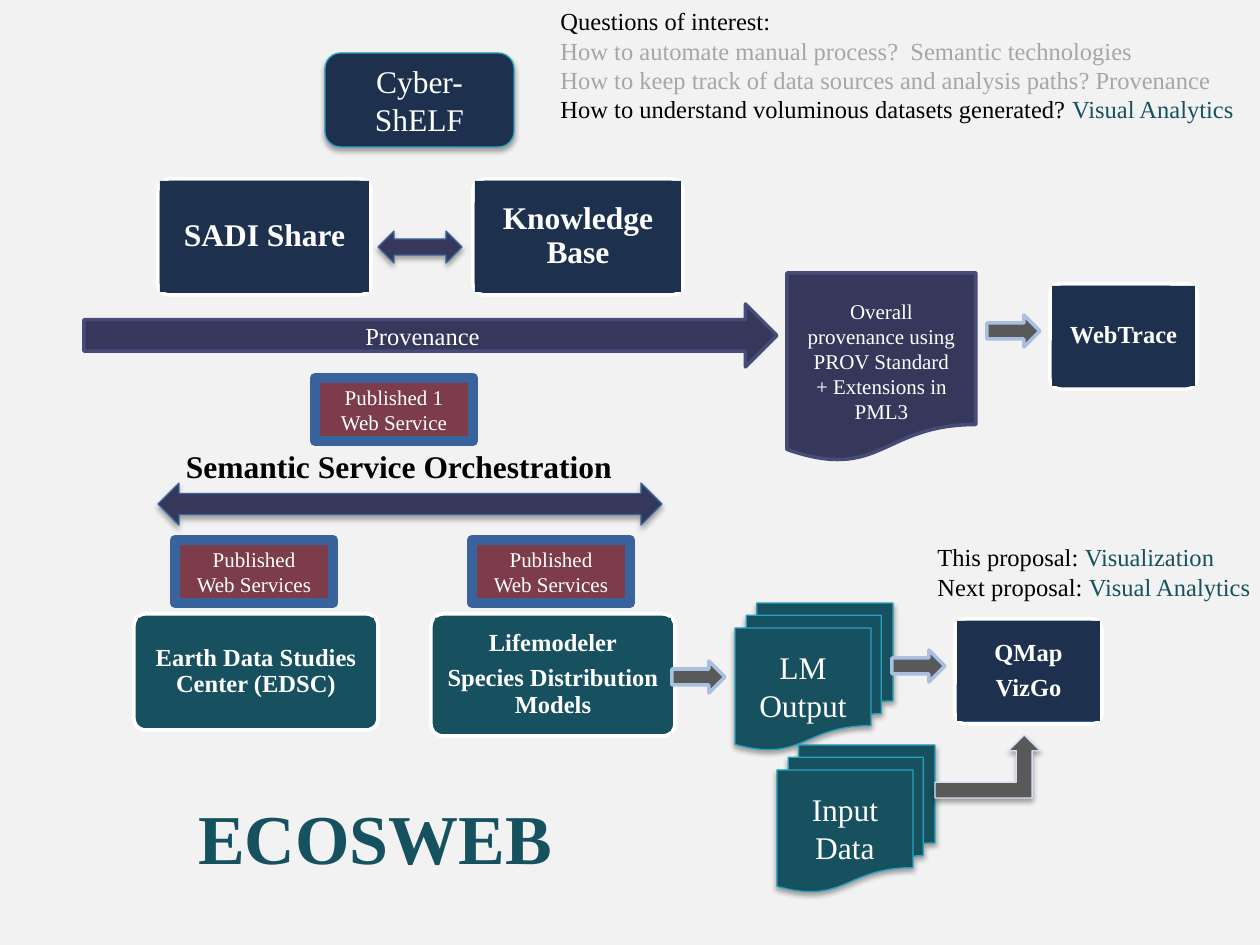
from lxml.etree import SubElement
from pptx import Presentation
from pptx.dml.color import RGBColor
from pptx.enum.shapes import MSO_SHAPE
from pptx.enum.text import MSO_ANCHOR, MSO_AUTO_SIZE, PP_ALIGN
from pptx.oxml.ns import qn
from pptx.util import Pt

PX = 914400 / 126
FONT = "Times New Roman"

PAPER = RGBColor(0xF2, 0xF2, 0xF2)
WHITE = RGBColor(0xFF, 0xFF, 0xFF)
BLACK = RGBColor(0x00, 0x00, 0x00)
FADED = RGBColor(0xA6, 0xA6, 0xA6)
GRAY = RGBColor(0x59, 0x59, 0x59)
MAROON = RGBColor(0x7D, 0x3C, 0x4A)
BLUE = RGBColor(0x39, 0x63, 0x9D)
PALE_BLUE = RGBColor(0xA8, 0xBF, 0xDF)
PALEST_BLUE = RGBColor(0xD4, 0xDF, 0xEF)
NAVY = RGBColor(0x1D, 0x31, 0x4E)
INDIGO = RGBColor(0x35, 0x38, 0x5A)
VIOLET = RGBColor(0x47, 0x4B, 0x78)
TEAL = RGBColor(0x17, 0x51, 0x60)
TEAL_TEXT = RGBColor(0x16, 0x51, 0x60)
CYAN = RGBColor(0x28, 0xA1, 0xBE)


def px(*lengths):
    return [round(length * PX) for length in lengths]


def apply(target, values):
    for name, value in values.items():
        setattr(target, name, value)


def write(frame, paragraphs, size, bold=False, color=WHITE,
          align=PP_ALIGN.CENTER, spacing=None):
    """Each paragraph is a string or a list of (text, color) pairs."""
    for index, content in enumerate(paragraphs):
        paragraph = frame.paragraphs[0] if index == 0 else frame.add_paragraph()
        apply(paragraph, {"alignment": align, **(spacing or {})})
        pieces = [(content, color)] if isinstance(content, str) else content
        for text, piece_color in pieces:
            run = paragraph.add_run()
            run.text = text
            apply(run.font, {"name": FONT, "size": Pt(size), "bold": bold})
            run.font.color.rgb = piece_color


def add_shadow(shape):
    effects = shape._element.spPr.find(qn("a:effectLst"))
    shadow = SubElement(effects, qn("a:outerShdw"), blurRad=str(Pt(3.1)),
                        dist=str(Pt(1.8)), dir="5400000", rotWithShape="0")
    color = SubElement(shadow, qn("a:srgbClr"), val="000000")
    SubElement(color, qn("a:alpha"), val="35000")


def add_block(slide, kind, box, fill, line=None, width=0.75, shadow=False):
    block = slide.shapes.add_shape(kind, *px(*box))
    block.shadow.inherit = False
    block.fill.solid()
    block.fill.fore_color.rgb = fill
    if line is None:
        block.line.fill.background()
    else:
        block.line.color.rgb = line
        block.line.width = Pt(width)
    if shadow:
        add_shadow(block)
    apply(block.text_frame, {"word_wrap": True, "vertical_anchor": MSO_ANCHOR.MIDDLE})
    return block


def add_card(slide, box, paragraphs, size, fill=NAVY, edge_fill=None, inset=2):
    """White-edged rounded card with a plain text panel on top."""
    left, top, width, height = box
    edge = add_block(slide, MSO_SHAPE.ROUNDED_RECTANGLE, box, edge_fill or fill, WHITE, 2)
    edge.adjustments[0] = 0.1
    panel_box = (left + inset, top + inset, width - 2 * inset, height - 2 * inset - 1)
    panel = add_block(slide, MSO_SHAPE.RECTANGLE, panel_box, fill)
    margin = px(8)[0]
    sides = ("left", "top", "right", "bottom")
    apply(panel.text_frame, {f"margin_{side}": margin for side in sides})
    write(panel.text_frame, paragraphs, size, bold=True,
          spacing={"line_spacing": 0.9, "space_after": Pt(round(size * 0.35))})


def add_service(slide, left, top, paragraphs):
    service = add_block(slide, MSO_SHAPE.RECTANGLE, (left, top, 158, 63), MAROON, BLUE, 6)
    write(service.text_frame, paragraphs, 12)


def add_data_stack(slide, left, top, paragraphs):
    stack = add_block(slide, MSO_SHAPE.FLOWCHART_MULTIDOCUMENT,
                      (left, top, 158, 147), TEAL, CYAN, shadow=True)
    write(stack.text_frame, paragraphs, 18)


def add_label(slide, box, paragraphs, size, wrap=False, **style):
    label = slide.shapes.add_textbox(*px(*box))
    apply(label.text_frame, {"word_wrap": wrap,
                             "auto_size": MSO_AUTO_SIZE.SHAPE_TO_FIT_TEXT})
    write(label.text_frame, paragraphs, size, **style)
    return label


def outline_text(label, color, width):
    properties = label.text_frame.paragraphs[0].runs[0].font._element
    line = SubElement(properties, qn("a:ln"), w=str(Pt(width)))
    fill = SubElement(line, qn("a:solidFill"))
    SubElement(fill, qn("a:srgbClr"), val=str(color))
    properties.insert(0, line)


def main():
    deck = Presentation()
    deck.slide_width, deck.slide_height = px(1260, 945)
    slide = deck.slides.add_slide(deck.slide_layouts[6])
    slide.background.fill.solid()
    slide.background.fill.fore_color.rgb = PAPER

    # Published web services
    for left in (472, 175):
        add_service(slide, left, 540, ["Published", "Web Services"])
    add_service(slide, 315, 378, ["Published 1", "Web Service"])

    # Component cards
    add_card(slide, (134, 614, 244, 116), ["Earth Data Studies Center (EDSC)"],
             14, TEAL, inset=4)
    add_card(slide, (431, 614, 244, 122),
             ["Lifemodeler", "Species Distribution Models"], 14, TEAL, inset=4)
    add_card(slide, (158, 179, 213, 116), ["SADI Share"], 18)
    add_card(slide, (473, 179, 210, 116), ["Knowledge Base"], 18)
    add_card(slide, (1050, 284, 147, 105), ["WebTrace"], 14)
    add_card(slide, (955, 619, 147, 105), ["QMap", "VizGo"], 14, edge_fill=BLUE)

    # Research center
    center = add_block(slide, MSO_SHAPE.ROUNDED_RECTANGLE, (325, 53, 189, 94),
                       NAVY, CYAN, shadow=True)
    write(center.text_frame, ["Cyber-ShELF"], 18)

    # Two-way exchange and orchestration
    for box in ((378, 231, 84, 32), (158, 483, 504, 42)):
        add_block(slide, MSO_SHAPE.LEFT_RIGHT_ARROW, box, INDIGO, BLUE, shadow=True)
    add_label(slide, (168, 441, 462, 50), ["Semantic Service Orchestration"], 18,
              wrap=True, bold=True, color=BLACK)

    # Provenance flow
    provenance = add_block(slide, MSO_SHAPE.RIGHT_ARROW, (84, 304, 693, 63),
                           INDIGO, VIOLET, 2)
    write(provenance.text_frame, ["Provenance"], 14)
    record = add_block(slide, MSO_SHAPE.FLOWCHART_DOCUMENT, (787, 273, 189, 189),
                       INDIGO, VIOLET, 2)
    record.text_frame.margin_top = px(31)[0]
    write(record.text_frame, ["Overall provenance using", "PROV Standard",
                              "+ Extensions in PML3"], 12)

    # Data outputs and inputs
    add_data_stack(slide, 735, 603, ["LM Output"])
    add_data_stack(slide, 777, 745, ["Input", "Data"])
    for left, top in ((987, 315), (892, 650), (672, 661)):
        add_block(slide, MSO_SHAPE.RIGHT_ARROW, (left, top, 53, 32), GRAY, PALE_BLUE, 2)
    add_block(slide, MSO_SHAPE.BENT_UP_ARROW, (935, 735, 105, 63),
              GRAY, PALEST_BLUE, shadow=True)

    # Questions, proposals and project title
    add_label(slide, (548, 0, 712, 131), [
        [("Questions of interest:", BLACK)],
        [("How to automate manual process?  Semantic technologies", FADED)],
        [("How to keep track of data sources and analysis paths? Provenance", FADED)],
        [("How to understand voluminous datasets generated? ", BLACK),
         ("Visual Analytics", TEAL_TEXT)],
    ], 14, align=PP_ALIGN.LEFT)
    add_label(slide, (925, 536, 341, 72), [
        [("This proposal: ", BLACK), ("Visualization", TEAL_TEXT)],
        [("Next proposal: ", BLACK), ("Visual Analytics", TEAL_TEXT)],
    ], 14, align=PP_ALIGN.LEFT)
    title = add_label(slide, (155, 788, 440, 97), ["ECOSWEB"], 40,
                      bold=True, color=TEAL_TEXT)
    outline_text(title, RGBColor(0x23, 0x48, 0x7C), 0.71)

    deck.save("out.pptx")


if __name__ == "__main__":
    main()
